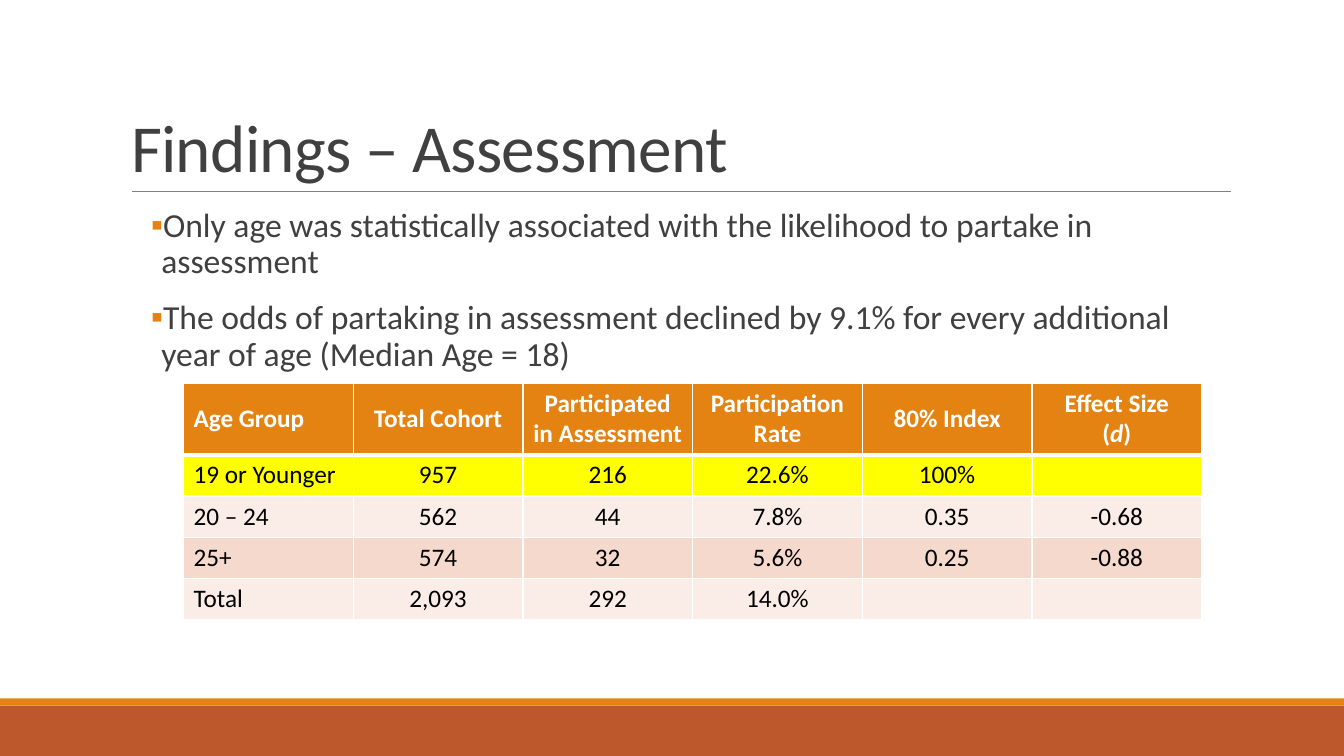
import pptx
import pptx.dml.color
import pptx.enum.shapes
import pptx.enum.text
import pptx.oxml
import pptx.oxml.ns
import pptx.util
from pptx.util import Inches

COLORS = {
    "white": "FFFFFF", "black": "000000", "text": "404040", "rule": "808080",
    "orange": "E48312", "rust": "BD582C", "highlight": "FFFF00",
    "light": "FAEDE7", "tint": "F5D9CC",
}
FONT = "Calibri"
BULLETS = [
    "Only age was statistically associated with the likelihood to partake in assessment",
    "The odds of partaking in assessment declined by 9.1% for every additional "
    "year of age (Median Age = 18)",
]
AGE_ROWS = [
    ["Age Group", "Total Cohort", "Participated in Assessment", "Participation Rate",
     "80% Index", "Effect Size\n(d)"],
    ["19 or Younger", "957", "216", "22.6%", "100%", ""],
    ["20 – 24", "562", "44", "7.8%", "0.35", "-0.68"],
    ["25+", "574", "32", "5.6%", "0.25", "-0.88"],
    ["Total", "2,093", "292", "14.0%", "", ""],
]
ROW_FILLS = ["orange", "highlight", "light", "tint", "light"]


def rgb(name):
    return pptx.dml.color.RGBColor.from_string(COLORS[name])


def add_xml(parent, body):
    parent.append(pptx.oxml.parse_xml(
        body.replace(" ", f" {pptx.oxml.ns.nsdecls('a')} ", 1)))


def set_font(paragraph, size, color, bold=False):
    paragraph.font.name = FONT
    paragraph.font.size = pptx.util.Pt(size)
    paragraph.font.bold = bold
    paragraph.font.color.rgb = rgb(color)


def place(shape, left, top, width, height):
    shape.left, shape.top = Inches(left), Inches(top)
    shape.width, shape.height = Inches(width), Inches(height)


def add_band(page, top, height, color):
    band = page.shapes.add_shape(
        pptx.enum.shapes.MSO_SHAPE.RECTANGLE,
        0, Inches(top), Inches(13.33), Inches(height))
    band.shadow.inherit = False
    band.fill.solid()
    band.fill.fore_color.rgb = rgb(color)
    band.line.fill.background()


def add_rule(page):
    rule = page.shapes.add_connector(
        pptx.enum.shapes.MSO_CONNECTOR.STRAIGHT,
        Inches(1.31), Inches(1.9), Inches(12.21), Inches(1.9))
    rule.line.color.rgb = rgb("rule")
    rule.line.width = pptx.util.Pt(0.5)
    add_xml(rule._element.spPr, "<a:effectLst />")


def fill_title(title, text):
    place(title, 1.2, 0.31, 11, 1.59)
    frame = title.text_frame
    frame.text = text
    frame.auto_size = pptx.enum.text.MSO_AUTO_SIZE.NONE
    frame.vertical_anchor = pptx.enum.text.MSO_ANCHOR.BOTTOM
    heading = frame.paragraphs[0]
    heading.alignment = pptx.enum.text.PP_ALIGN.LEFT
    heading.line_spacing = 0.85
    set_font(heading, 48, "text")
    heading.runs[0].font._element.set("spc", "-50")


def fill_bullets(body, lines):
    place(body, 1.2, 2.02, 11, 4.4)
    frame = body.text_frame
    frame.text = "\n".join(lines)
    frame.auto_size = pptx.enum.text.MSO_AUTO_SIZE.NONE
    frame.margin_left = frame.margin_right = 0
    for para in frame.paragraphs:
        properties = para._p.get_or_add_pPr()
        properties.set("marL", str(Inches(0.4)))
        properties.set("indent", str(Inches(-0.1)))
        add_xml(properties, f'<a:buClr ><a:srgbClr val="{COLORS["orange"]}"/></a:buClr>')
        add_xml(properties, f'<a:buFont typeface="{FONT}"/>')
        add_xml(properties, '<a:buChar char="▪"/>')
        para.line_spacing = 0.9
        para.space_before = pptx.util.Pt(12)
        para.space_after = pptx.util.Pt(2)
        set_font(para, 24, "text")


def set_borders(cell, bottom):
    properties = cell._tc.get_or_add_tcPr()
    for side, points in (("L", 1), ("R", 1), ("T", 1), ("B", bottom)):
        add_xml(properties,
                f'<a:ln{side} w="{pptx.util.Pt(points)}"><a:solidFill>'
                f'<a:srgbClr val="{COLORS["white"]}"/></a:solidFill></a:ln{side}>')


def write_effect_symbol(para):
    para.clear()
    for text in ("(", "d", ")"):
        span = para.add_run()
        span.text = text
        span.font.italic = text == "d"


def fill_cell(cell, text, row, column):
    header = row == 0
    set_borders(cell, 3 if header or False else 1)
    cell.fill.solid()
    cell.fill.fore_color.rgb = rgb(ROW_FILLS[row])
    cell.text = text
    if header or column:
        cell.vertical_anchor = pptx.enum.text.MSO_ANCHOR.MIDDLE
    for para in cell.text_frame.paragraphs:
        if para.text == "(d)":
            write_effect_symbol(para)
        if column:
            para.alignment = pptx.enum.text.PP_ALIGN.CENTER
        set_font(para, 18, "white" if header else "black", header)


def add_age_table(page):
    table = page.shapes.add_table(
        len(AGE_ROWS), len(AGE_ROWS[0]),
        Inches(1.82), Inches(3.8), Inches(10.1), Inches(2.32)).table
    for row, values in enumerate(AGE_ROWS):
        table.rows[row].height = Inches(0.41 if row else 0.69)
        for column, text in enumerate(values):
            fill_cell(table.cell(row, column), text, row, column)


def main():
    deck = pptx.Presentation()
    deck.slide_width, deck.slide_height = Inches(13.33), Inches(7.5)
    page = deck.slides.add_slide(deck.slide_layouts[1])
    add_band(page, 7, 0.5, "rust")
    add_band(page, 6.93, 0.07, "orange")
    add_rule(page)
    fill_title(page.shapes.title, "Findings – Assessment")
    fill_bullets(page.placeholders[1], BULLETS)
    add_age_table(page)
    deck.save("out.pptx")


if __name__ == "__main__":
    main()
